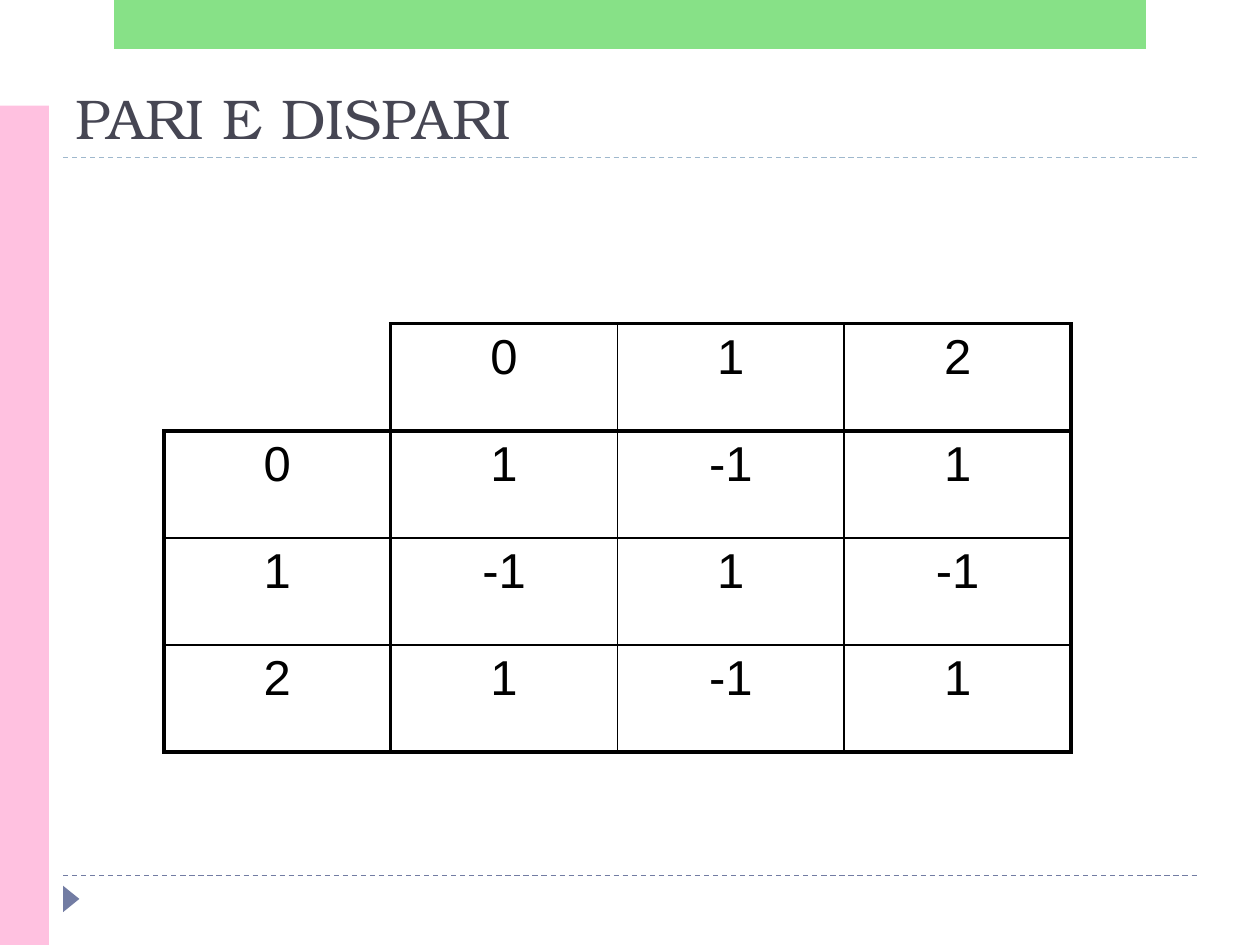
import pptx
import pptx.util
import pptx.dml.color
import pptx.enum.dml
import pptx.enum.shapes
import pptx.enum.text
import pptx.oxml.ns
import lxml.etree

Pt = pptx.util.Pt
KIND = pptx.enum.shapes.MSO_SHAPE
qn = pptx.oxml.ns.qn

GRID = [
    ["", "0", "1", "2"],
    ["0", "1", "-1", "1"],
    ["1", "-1", "1", "-1"],
    ["2", "1", "-1", "1"],
]


def color(code):
    return pptx.dml.color.RGBColor.from_string(code)


def style(font, form):
    for key, val in form.items():
        if key == "color":
            font.color.rgb = color(val)
        else:
            setattr(font, key, val)


def rule(slide, left, top, width, code):
    """Dashed horizontal line."""
    line = slide.shapes.add_connector(
        pptx.enum.shapes.MSO_CONNECTOR.STRAIGHT,
        Pt(left), Pt(top), Pt(left + width), Pt(top))
    line.line.color.rgb = color(code)
    line.line.width = Pt(0.75)
    line.line.dash_style = pptx.enum.dml.MSO_LINE.DASH
    props = line._element.find(qn("p:spPr"))
    lxml.etree.SubElement(props, qn("a:effectLst"))


def block(slide, kind, box, code, alpha=None, turn=0):
    """Plain filled shape."""
    shape = slide.shapes.add_shape(kind, *map(Pt, box))
    shape.shadow.inherit = False
    shape.fill.solid()
    shape.fill.fore_color.rgb = color(code)
    shape.line.fill.background()
    shape.rotation = turn
    if alpha:
        tint = shape._element.spPr.find(".//" + qn("a:srgbClr"))
        lxml.etree.SubElement(tint, qn("a:alpha"), val=str(alpha * 1000))


def frame(slide, width, height):
    """Side bands, rules and corner mark."""
    side = 36
    rule(slide, side, height - 39.6, width - 2 * side, "727CA3")
    rule(slide, side, 90, width - 2 * side, "9FB8CD")
    block(slide, KIND.ISOSCELES_TRIANGLE, (33.12, height - 31, 15.12, 9.36),
          "727CA3", turn=90)
    block(slide, KIND.RECTANGLE, (0, 60.3, 28, height - 60.3), "FFC1E0")
    block(slide, KIND.RECTANGLE, (65.2, 0, width - 130.4, 28), "62D862", 76)


def title(slide, box, text):
    shape = slide.shapes.title
    for key, val in zip(("left", "top", "width", "height"), box):
        setattr(shape, key, Pt(val))
    body = shape.text_frame
    body.text = text
    body.word_wrap = True
    body.auto_size = pptx.enum.text.MSO_AUTO_SIZE.NONE
    body.vertical_anchor = pptx.enum.text.MSO_ANCHOR.BOTTOM
    para = body.paragraphs[0]
    para.alignment = pptx.enum.text.PP_ALIGN.LEFT
    style(para.runs[0].font,
          {"name": "TeX Gyre Bonum", "size": Pt(32), "color": "464653"})


def border(cell, widths):
    """Cell edges in the order left, right, top, bottom; 0 hides one."""
    props = cell._tc.get_or_add_tcPr()
    for spot, (side, width) in enumerate(zip("LRTB", widths)):
        edge = lxml.etree.Element(qn("a:ln" + side), w=str(int(Pt(width))))
        if width:
            fill = lxml.etree.SubElement(edge, qn("a:solidFill"))
            lxml.etree.SubElement(fill, qn("a:srgbClr"), val="000000")
        else:
            lxml.etree.SubElement(edge, qn("a:noFill"))
        props.insert(spot, edge)


def payoff(slide, box, grid):
    """Game matrix: heavy lines around it and after the headers."""
    count = len(grid)
    table = slide.shapes.add_table(count, count, *map(Pt, box)).table
    table.first_row = table.horz_banding = False
    edges = [2.25, 2.25] + [1] * (count - 2) + [2.25]
    for row, line in enumerate(grid):
        for col, text in enumerate(line):
            cell = table.cell(row, col)
            cell.fill.background()
            widths = [edges[col], edges[col + 1], edges[row], edges[row + 1]]
            if row == col == 0:
                widths[0] = widths[2] = 0  # open corner
            border(cell, widths)
            cell.text = text
            para = cell.text_frame.paragraphs[0]
            para.alignment = pptx.enum.text.PP_ALIGN.CENTER
            style(para.font,
                  {"name": "Arial", "size": Pt(28), "color": "000000"})
            for run in para.runs:
                style(run.font,
                      {"name": "Arial", "size": Pt(28), "color": "000000"})


def main():
    deck = pptx.Presentation()
    width, height = 720, 540
    deck.slide_width, deck.slide_height = Pt(width), Pt(height)
    slide = deck.slides.add_slide(deck.slide_layouts[5])
    frame(slide, width, height)
    title(slide, (36, 39.6, 648, 50.4), "PARI E DISPARI")
    payoff(slide, (93.6, 185, 518.4, 244.8), GRID)
    deck.save("out.pptx")


if __name__ == "__main__":
    main()
